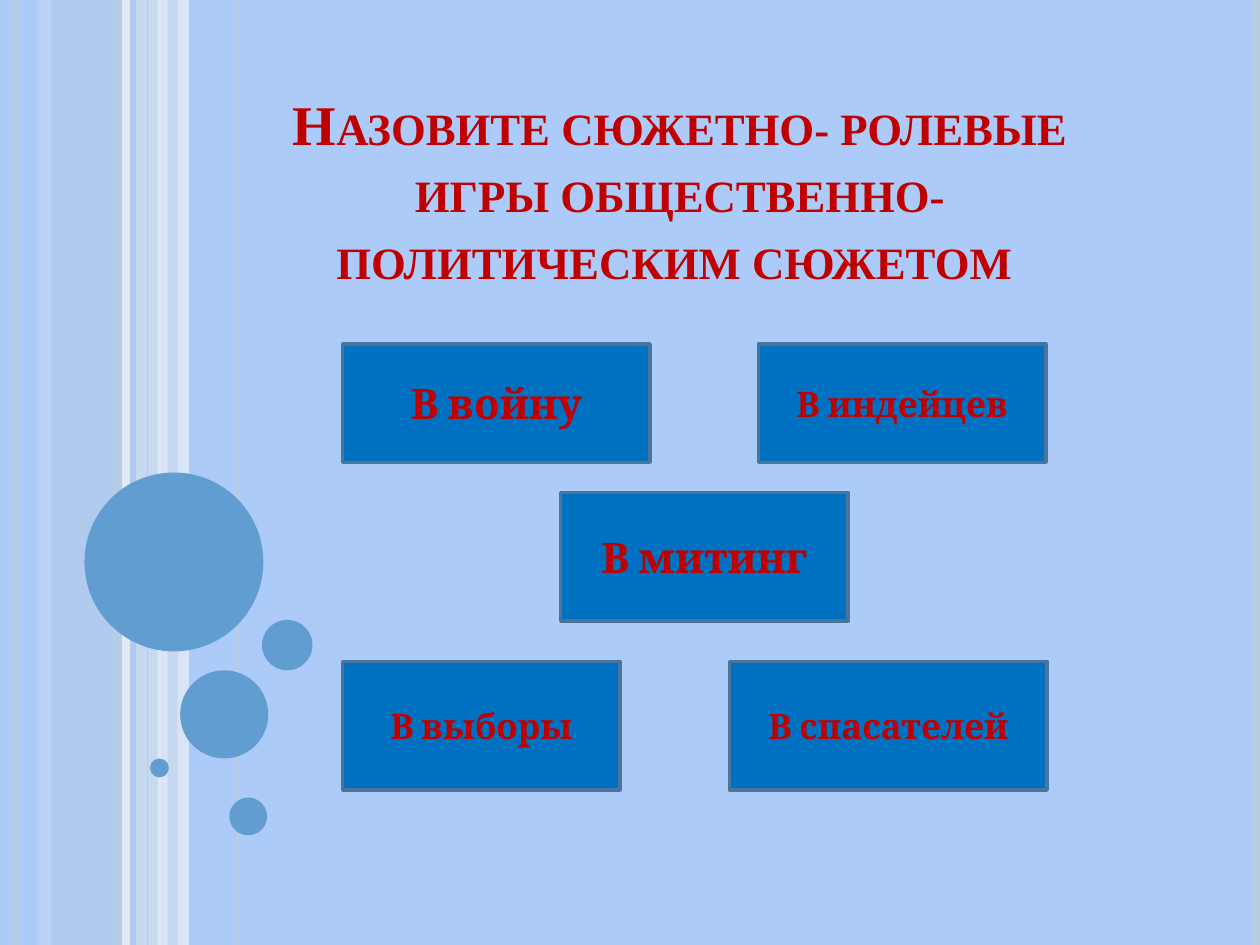
from lxml.etree import SubElement
from pptx import Presentation
from pptx.dml.color import RGBColor
from pptx.enum.shapes import MSO_CONNECTOR, MSO_SHAPE
from pptx.enum.text import MSO_ANCHOR, MSO_AUTO_SIZE, PP_ALIGN
from pptx.oxml.ns import qn
from pptx.util import Inches, Pt

HEIGHT = 7.5
RED, BLUE, BORDER, BUBBLE = "C00000", "0070C0", "49749B", "629DD1"
PALE, LIGHT, MIST = "B7CCE5", "D3DFEE", "EAEFF7"

# left, width, colour, opacity in percent
BANDS = [(0.42, 0.67, PALE, 54), (0.3, 0.11, LIGHT, 36),
         (1.08, 0.2, LIGHT, 70), (1.25, 0.25, MIST, 71)]
FRONT_BAND = (1.33, 0.08, PALE, 51)
# x, colour, width in points, opacity in percent
STRIPES = [(0.12, PALE, 4.5, 73), (1, MIST, 4.5, 83), (0.93, PALE, 4.5, 100),
           (1.89, PALE, 2.25, 82), (1.17, PALE, 0.75, 100),
           (9.97, PALE, 4.5, 100)]
# left, top, diameter
BUBBLES = [(0.67, 3.75, 1.42), (1.43, 5.32, 0.7), (1.19, 6.02, 0.15),
           (1.82, 6.33, 0.3), (2.08, 4.92, 0.4)]
# text, left, top, width, height, font size
GAMES = [("В войну", 2.72, 2.73, 2.44, 0.94, 24),
         ("В индейцев", 6.02, 2.73, 2.28, 0.94, 20),
         ("В митинг", 4.45, 3.91, 2.28, 1.02, 24),
         ("В выборы", 2.72, 5.25, 2.2, 1.02, 20),
         ("В спасателей", 5.79, 5.25, 2.52, 1.02, 20)]


def paint(fill, color, opacity=100):
    fill.solid()
    fill.fore_color.rgb = RGBColor.from_string(color)
    if opacity < 100:
        clr = fill._xPr.find(qn("a:solidFill"))[0]
        SubElement(clr, qn("a:alpha"), val=str(opacity * 1000))


def add_shape(s, kind, left, top, width, height, color, opacity=100):
    sp = s.shapes.add_shape(kind, Inches(left), Inches(top),
                            Inches(width), Inches(height))
    sp.shadow.inherit = False
    paint(sp.fill, color, opacity)
    sp.line.fill.background()
    return sp


def add_band(s, left, width, color, opacity):
    add_shape(s, MSO_SHAPE.RECTANGLE, left, 0, width, HEIGHT, color, opacity)


def add_stripe(s, x, color, width, opacity):
    line = s.shapes.add_connector(MSO_CONNECTOR.STRAIGHT, Inches(x), 0,
                                  Inches(x), Inches(HEIGHT))
    line.line.width = Pt(width)
    paint(line.line.fill, color, opacity)
    SubElement(line._element.spPr, qn("a:effectLst"))


def style_text(p, font, size):
    p.alignment = PP_ALIGN.CENTER
    p.font.name = font
    p.font.size = Pt(size)
    p.font.bold = True
    p.font.color.rgb = RGBColor.from_string(RED)


def add_game(s, text, left, top, width, height, size):
    sp = add_shape(s, MSO_SHAPE.RECTANGLE, left, top, width, height, BLUE)
    paint(sp.line.fill, BORDER)
    sp.line.width = Pt(2)
    tf = sp.text_frame
    tf.text = text
    tf.word_wrap = True
    tf.vertical_anchor = MSO_ANCHOR.MIDDLE
    style_text(tf.paragraphs[0], "Cambria", size)


def set_title(s, text):
    title = s.shapes.title
    title.left, title.top = Inches(1.85), Inches(0.29)
    title.width, title.height = Inches(7.09), Inches(2.07)
    tf = title.text_frame
    tf.text = text
    tf.word_wrap = True
    tf.auto_size = MSO_AUTO_SIZE.NONE
    tf.vertical_anchor = MSO_ANCHOR.BOTTOM
    p = tf.paragraphs[0]
    style_text(p, "Times New Roman", 32)
    p.line_spacing = Pt(38.25)
    p.runs[0].font._element.set("cap", "small")


def main():
    prs = Presentation()
    prs.slide_width, prs.slide_height = Inches(10), Inches(HEIGHT)
    s = prs.slides.add_slide(prs.slide_layouts[5])
    paint(s.background.fill, "ACCBF9")

    # Striped left margin
    for band in BANDS:
        add_band(s, *band)
    for stripe in STRIPES:
        add_stripe(s, *stripe)
    add_band(s, *FRONT_BAND)

    # Bubbles
    for left, top, size in BUBBLES:
        add_shape(s, MSO_SHAPE.OVAL, left, top, size, size, BUBBLE)

    # Question and answers
    set_title(s, "Назовите сюжетно- ролевые игры общественно-политическим сюжетом ")
    for game in GAMES:
        add_game(s, *game)

    prs.save("out.pptx")


if __name__ == "__main__":
    main()
